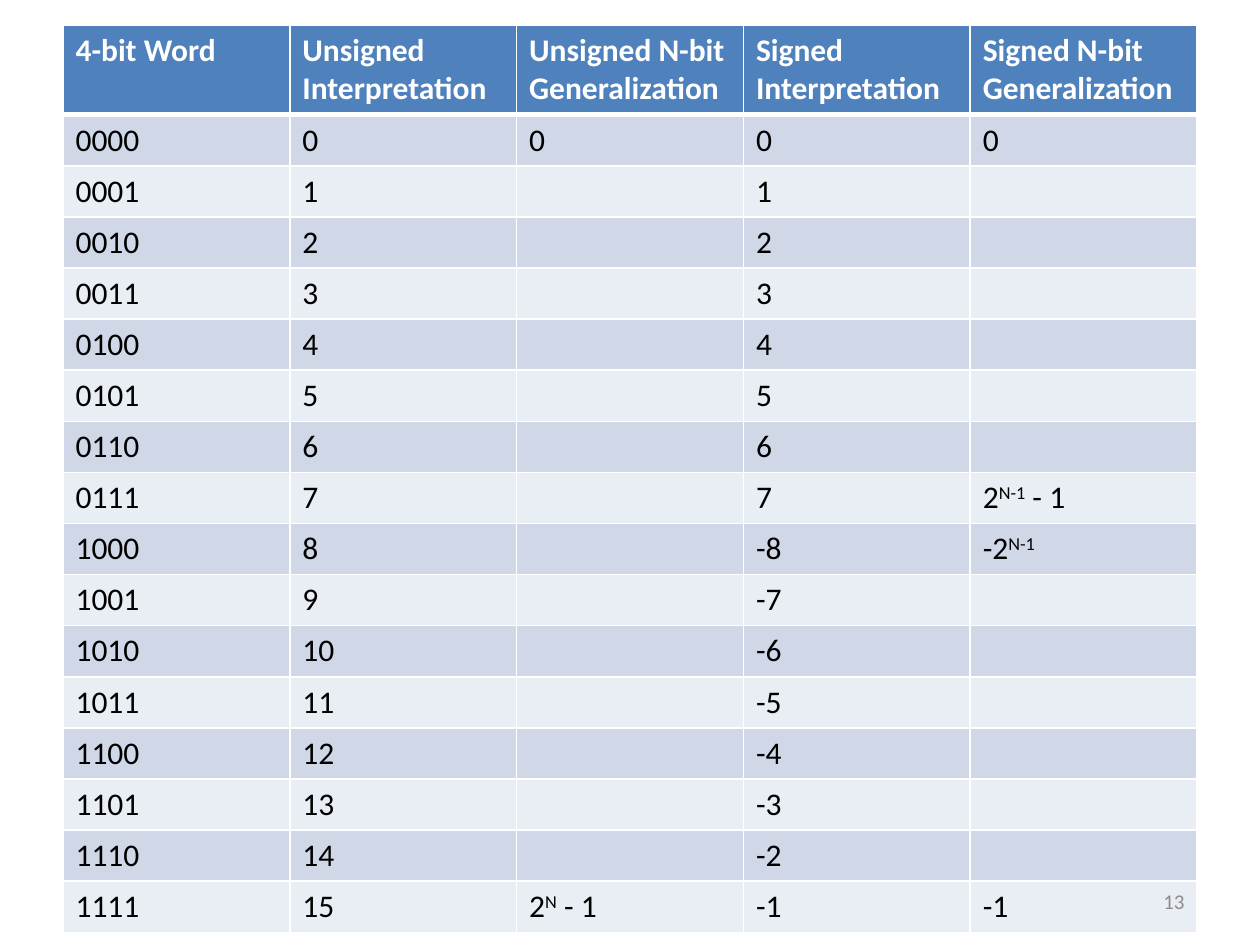
from lxml import etree
from pptx import Presentation, util as u
from pptx.dml.color import RGBColor
from pptx.enum import text
from pptx.oxml.ns import qn

COLORS = {"header": "4F81BD", "band": "D0D8E8", "plain": "E9EDF4",
          "white": "FFFFFF", "black": "000000", "gray": "8C8C8C"}
HEADERS = ["4-bit Word", "Unsigned Interpretation", "Unsigned N-bit Generalization",
           "Signed Interpretation", "Signed N-bit Generalization"]
BITS = 4
# Generalizations by word value; text between carets is superscript
UNSIGNED_N = {0: "0", 15: "2^N^ - 1"}
SIGNED_N = {0: "0", 7: "2^N-1^ - 1", 8: "-2^N-1^", 15: "-1"}


class Deck:
    """Holds the style and the current slide."""
    font = "Calibri"

    def __init__(self, prs):
        self.s = prs.slides.add_slide(prs.slide_layouts[6])

    def add_text(self, p, content, color, size=18, bold=False):
        fmt = {"name": self.font, "size": u.Pt(size), "bold": bold}
        for i, part in enumerate(content.split("^")):
            if not part:
                continue
            r = p.add_run()
            r.text = part
            for name, value in fmt.items():
                setattr(r.font, name, value)
            r.font.color.rgb = RGBColor.from_string(COLORS[color])
            if i % 2:
                r._r.get_or_add_rPr().set("baseline", "30000")

    def borders(self, cell, top, bottom):
        tc_pr = cell._tc.get_or_add_tcPr()
        for side, width in {"L": 1, "R": 1, "T": top, "B": bottom}.items():
            ln = etree.SubElement(tc_pr, qn(f"a:ln{side}"), w=str(u.Pt(width)))
            fill = etree.SubElement(ln, qn("a:solidFill"))
            etree.SubElement(fill, qn("a:srgbClr"), val=COLORS["white"])

    def table(self, rows, x, y, w, h, header_h, row_h):
        frame = self.s.shapes.add_table(len(rows), len(rows[0]), *map(u.Pt, (x, y, w, h)))
        tbl = frame.table
        tbl.horz_banding = False
        for i, values in enumerate(rows):
            head = i == 0
            tbl.rows[i].height = u.Pt(header_h if head else row_h)
            fill = "header" if head else ("band" if i % 2 else "plain")
            for j, value in enumerate(values):
                cell = tbl.cell(i, j)
                self.borders(cell, 3 if i == 1 else 1, 3 if head else 1)
                cell.fill.solid()
                cell.fill.fore_color.rgb = RGBColor.from_string(COLORS[fill])
                self.add_text(cell.text_frame.paragraphs[0], value,
                              "white" if head else "black", bold=head)
        frame.height = u.Pt(h)

    def label(self, content, x, y, w, h, color, size):
        tf = self.s.shapes.add_textbox(*map(u.Pt, (x, y, w, h))).text_frame
        tf.word_wrap = True
        tf.vertical_anchor = text.MSO_ANCHOR.MIDDLE
        p = tf.paragraphs[0]
        p.alignment = text.PP_ALIGN.RIGHT
        self.add_text(p, content, color, size)


def word_row(n):
    signed = n - 2 ** BITS if n >= 2 ** (BITS - 1) else n
    return [f"{n:0{BITS}b}", str(n), UNSIGNED_N.get(n, ""), str(signed), SIGNED_N.get(n, "")]


def main():
    prs = Presentation()
    prs.slide_width, prs.slide_height = u.Pt(720), u.Pt(540)
    deck = Deck(prs)

    # Table of all words
    rows = [HEADERS] + [word_row(n) for n in range(2 ** BITS)]
    deck.table(rows, 36, 14.4, 648, 511.2, header_h=41, row_h=23)

    # Slide number
    deck.label("13", 516, 500.5, 168, 28.75, "gray", 12)

    prs.save("out.pptx")


if __name__ == "__main__":
    main()
